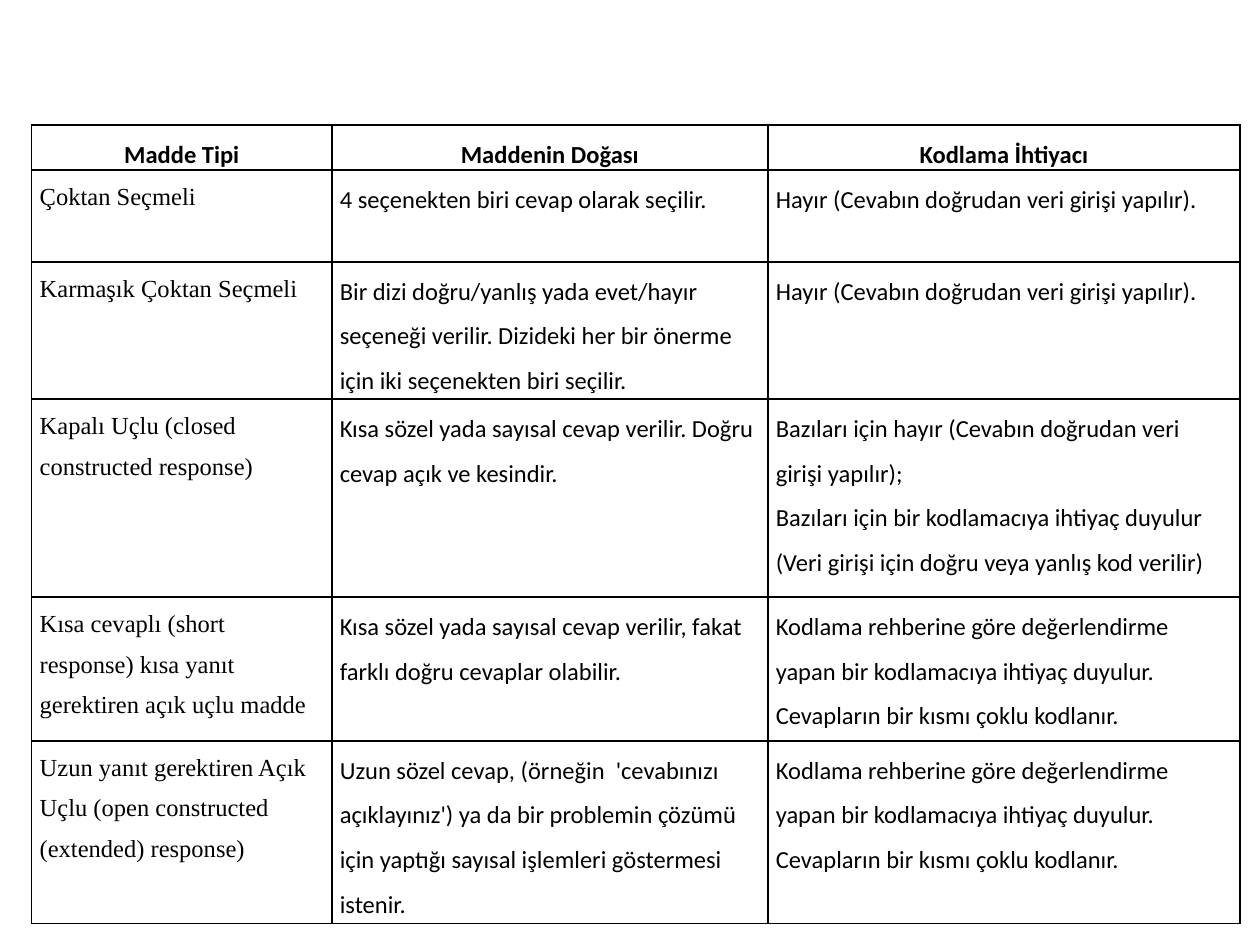
import dataclasses

import pptx
import pptx.dml.color
import pptx.enum.text
import pptx.oxml
import pptx.oxml.ns
import pptx.util
from pptx.util import Cm, Pt


@dataclasses.dataclass(frozen=True)
class Theme:
    ink: str = "000000"
    paper: str = "FFFFFF"
    body_font: str = "Calibri"
    label_font: str = "Times New Roman"
    text_size: int = 14
    border_width: int = 1
    line_spacing: float = 1.5


THEME = Theme()

COLUMN_WIDTHS = [6.05, 8.79, 9.52]
ROW_HEIGHTS = [0.91, 1.85, 2.77, 3.99, 2.9, 3.68]

DIRECT_ENTRY = "Hayır (Cevabın doğrudan veri girişi yapılır)."
CODER_NEEDED = (
    "Kodlama rehberine göre değerlendirme yapan bir kodlamacıya ihtiyaç "
    "duyulur. Cevapların bir kısmı çoklu kodlanır."
)

# Item type, nature of the item, need for coding; a newline starts a paragraph
ITEM_TYPES = [
    ("Madde Tipi", "Maddenin Doğası", "Kodlama İhtiyacı"),
    ("Çoktan Seçmeli", "4 seçenekten biri cevap olarak seçilir.", DIRECT_ENTRY),
    (
        "Karmaşık Çoktan Seçmeli",
        "Bir dizi doğru/yanlış yada evet/hayır seçeneği verilir. "
        "Dizideki her bir önerme için iki seçenekten biri seçilir.",
        DIRECT_ENTRY,
    ),
    (
        "Kapalı Uçlu (closed constructed response)",
        "Kısa sözel yada sayısal cevap verilir. Doğru cevap açık ve kesindir.",
        "Bazıları için hayır (Cevabın doğrudan veri girişi yapılır);\n"
        "Bazıları için bir kodlamacıya ihtiyaç duyulur "
        "(Veri girişi için doğru veya yanlış kod verilir)",
    ),
    (
        "Kısa cevaplı (short response) kısa yanıt gerektiren açık uçlu madde",
        "Kısa sözel yada sayısal cevap verilir, fakat farklı doğru cevaplar olabilir.",
        CODER_NEEDED,
    ),
    (
        "Uzun yanıt gerektiren Açık Uçlu (open constructed (extended) response)",
        "Uzun sözel cevap, (örneğin  'cevabınızı açıklayınız') ya da bir problemin "
        "çözümü için yaptığı sayısal işlemleri göstermesi istenir.",
        CODER_NEEDED,
    ),
]


def set_borders(cell):
    """Draw all four sides; border elements must come before the fill."""
    properties = cell._tc.get_or_add_tcPr()
    for position, side in enumerate(("lnL", "lnR", "lnT", "lnB")):
        border = pptx.oxml.parse_xml(
            f'<a:{side} {pptx.oxml.ns.nsdecls("a")} w="{Pt(THEME.border_width)}">'
            f'<a:solidFill><a:srgbClr val="{THEME.ink}"/></a:solidFill></a:{side}>'
        )
        properties.insert(position, border)


def fill_cell(cell, text, is_header, is_label):
    cell.margin_left = cell.margin_right = Cm(0.16)
    cell.margin_top = cell.margin_bottom = Cm(0)
    cell.fill.solid()
    cell.fill.fore_color.rgb = pptx.dml.color.RGBColor.from_string(THEME.paper)
    set_borders(cell)

    cell.text = text
    for para in cell.text_frame.paragraphs:
        para.line_spacing = THEME.line_spacing
        para.font.name = THEME.label_font if is_label else THEME.body_font
        para.font.size = Pt(THEME.text_size)
        para.font.bold = is_header
        para.font.color.rgb = pptx.dml.color.RGBColor.from_string(THEME.ink)
        if is_header:
            para.alignment = pptx.enum.text.PP_ALIGN.CENTER
            para.space_before = para.space_after = Pt(3)


def add_item_table(page, left, top, width, height):
    frame = page.shapes.add_table(
        len(ITEM_TYPES), len(COLUMN_WIDTHS), left, top, width, height
    )
    table = frame.table
    table.horz_banding = False

    # Columns and rows share the given box in proportion to their sizes
    for column, share in zip(table.columns, COLUMN_WIDTHS):
        column.width = int(width * share / sum(COLUMN_WIDTHS))
    for row, share in zip(table.rows, ROW_HEIGHTS):
        row.height = int(height * share / sum(ROW_HEIGHTS))

    for row_index, texts in enumerate(ITEM_TYPES):
        is_header = row_index == 0
        for column_index, text in enumerate(texts):
            is_label = column_index == 0 and not is_header
            fill_cell(table.cell(row_index, column_index), text, is_header, is_label)


def main():
    deck = pptx.Presentation()
    deck.slide_width, deck.slide_height = Cm(25.4), Cm(19.05)
    page = deck.slides.add_slide(deck.slide_layouts[6])
    add_item_table(page, Cm(0.64), Cm(2.52), Cm(24.36), Cm(16.1))
    deck.save("out.pptx")


if __name__ == "__main__":
    main()
